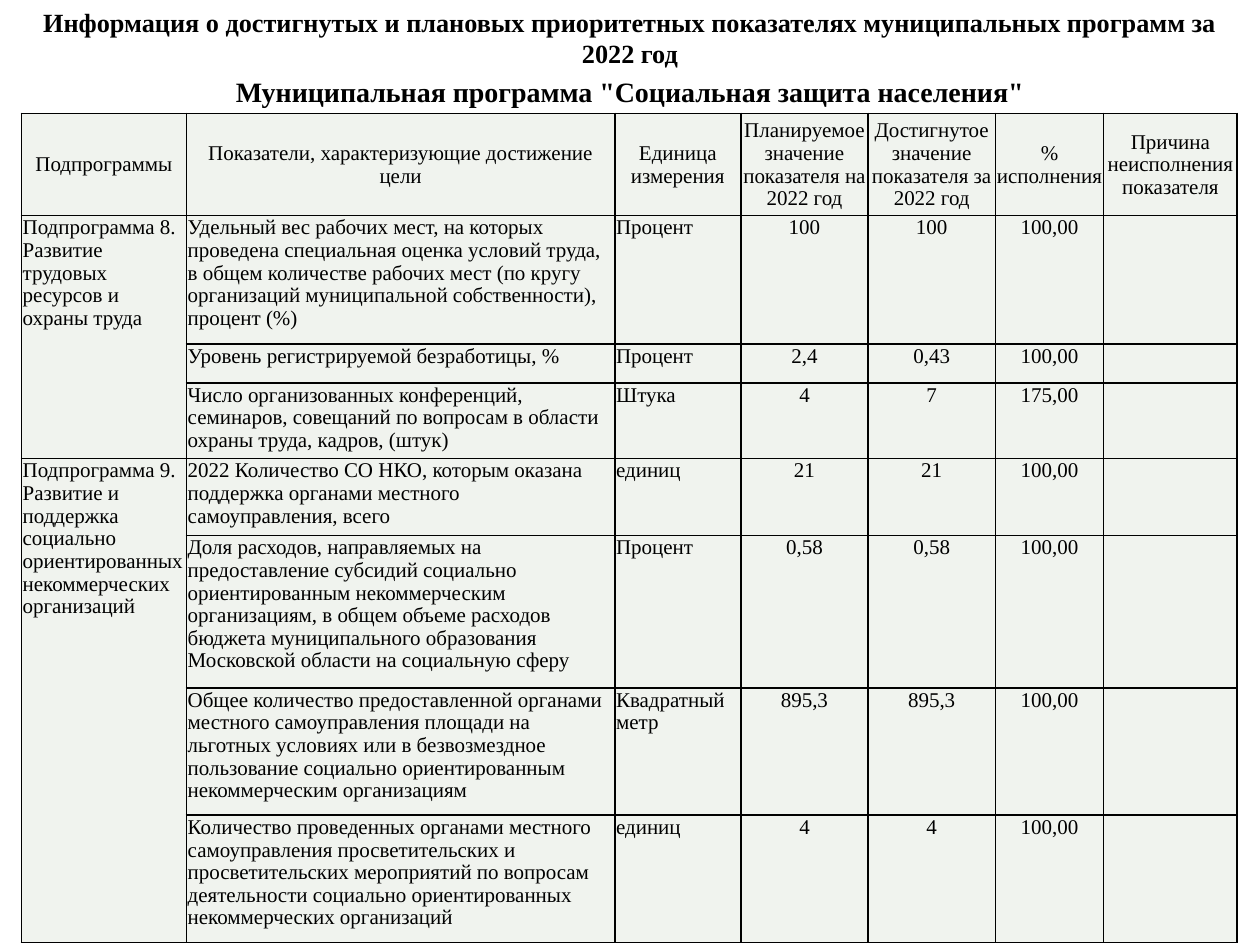
import pptx
import pptx.util
import pptx.oxml
import pptx.dml.color
import pptx.enum.text
from pptx.util import Inches, Pt

BLACK = pptx.dml.color.RGBColor(0x00, 0x00, 0x00)
CELL_FILL = pptx.dml.color.RGBColor(0xF0, 0xF3, 0xEE)
FONT = "Times New Roman"
LEFT = pptx.enum.text.PP_ALIGN.LEFT
CENTER = pptx.enum.text.PP_ALIGN.CENTER
TOP = pptx.enum.text.MSO_ANCHOR.TOP
MIDDLE = pptx.enum.text.MSO_ANCHOR.MIDDLE

COLUMN_WIDTHS = [1.31, 3.4, 1, 1.01, 1.01, 0.86, 1.06]
ROW_HEIGHTS = [0.81, 1.02, 0.24, 0.6, 0.61, 1.21, 1.01, 1.01]
HEADERS = [
    "Подпрограммы",
    "Показатели, характеризующие достижение цели",
    "Единица измерения",
    "Планируемое значение показателя на 2022 год",
    "Достигнутое значение показателя за 2022 год",
    "% исполнения",
    "Причина неисполнения показателя",
]
SUBPROGRAMS = [
    ("Подпрограмма 8. Развитие трудовых ресурсов и охраны труда", [
        ("Удельный вес рабочих мест, на которых проведена специальная оценка "
         "условий труда, в общем количестве рабочих мест (по кругу организаций "
         "муниципальной собственности), процент (%)",
         "Процент", "100", "100", "100,00", ""),
        ("Уровень регистрируемой безработицы, %",
         "Процент", "2,4", "0,43", "100,00", ""),
        ("Число организованных конференций, семинаров, совещаний по вопросам "
         "в области охраны труда, кадров, (штук)",
         "Штука", "4", "7", "175,00", ""),
    ]),
    ("Подпрограмма 9. Развитие и поддержка социально ориентированных "
     "некоммерческих организаций", [
        ("2022 Количество СО НКО, которым оказана поддержка органами местного "
         "самоуправления, всего",
         "единиц", "21", "21", "100,00", ""),
        ("Доля расходов, направляемых на предоставление субсидий социально "
         "ориентированным некоммерческим организациям, в общем объеме расходов "
         "бюджета муниципального образования Московской области на социальную сферу",
         "Процент", "0,58", "0,58", "100,00", ""),
        ("Общее количество предоставленной органами местного самоуправления "
         "площади на льготных условиях или в безвозмездное пользование социально "
         "ориентированным некоммерческим организациям",
         "Квадратный метр", "895,3", "895,3", "100,00", ""),
        ("Количество проведенных органами местного самоуправления просветительских "
         "и просветительских мероприятий по вопросам деятельности социально "
         "ориентированных некоммерческих организаций",
         "единиц", "4", "4", "100,00", ""),
    ]),
]


def write(p, text, size=12, bold=False, align=LEFT, spacing=None):
    p.alignment = align
    if spacing:
        p.line_spacing = spacing
    r = p.add_run()
    r.text = text
    r.font.name = FONT
    r.font.size = Pt(size)
    r.font.bold = bold
    r.font.color.rgb = BLACK


def add_title(s, lines, top, height, size):
    tf = s.shapes.add_textbox(0, Inches(top), Inches(10), Inches(height)).text_frame
    tf.word_wrap = True
    for i, line in enumerate(lines):
        p = tf.add_paragraph() if i else tf.paragraphs[0]
        write(p, line, size=size, bold=True, align=CENTER)


def add_borders(cell):
    tc_pr = cell._tc.get_or_add_tcPr()
    for i, side in enumerate(("lnL", "lnR", "lnT", "lnB")):
        tc_pr.insert(i, pptx.oxml.parse_xml(
            f'<a:{side} xmlns:a="http://schemas.openxmlformats.org/drawingml/2006/main" '
            f'w="{Pt(1)}"><a:solidFill><a:srgbClr val="{BLACK}"/></a:solidFill></a:{side}>'))


def fill_cell(cell, text, align=LEFT, anchor=TOP):
    cell.margin_left = cell.margin_right = cell.margin_top = Inches(0.01)
    cell.margin_bottom = 0
    cell.vertical_anchor = anchor
    cell.fill.solid()
    cell.fill.fore_color.rgb = CELL_FILL
    add_borders(cell)
    write(cell.text_frame.paragraphs[0], text, align=align, spacing=0.97)


def add_indicator_table(s):
    table = s.shapes.add_table(
        len(ROW_HEIGHTS), len(COLUMN_WIDTHS), Inches(0.17), Inches(0.9),
        Inches(sum(COLUMN_WIDTHS)), Inches(sum(ROW_HEIGHTS))).table
    for column, width in zip(table.columns, COLUMN_WIDTHS):
        column.width = Inches(width)
    for row, height in zip(table.rows, ROW_HEIGHTS):
        row.height = Inches(height)
    for c, header in enumerate(HEADERS):
        fill_cell(table.cell(0, c), header, align=CENTER, anchor=MIDDLE)
    row = 1
    for subprogram, indicators in SUBPROGRAMS:
        first = row
        for indicator in indicators:
            name = subprogram if row == first else ""
            for c, text in enumerate((name, *indicator)):
                fill_cell(table.cell(row, c), text, align=CENTER if c > 2 else LEFT)
            row += 1
        table.cell(first, 0).merge(table.cell(row - 1, 0))


def main():
    prs = pptx.Presentation()
    prs.slide_width = Inches(10)
    prs.slide_height = Inches(7.5)
    s = prs.slides.add_slide(prs.slide_layouts[6])
    add_title(s, ["Информация о достигнутых и плановых приоритетных показателях "
                  "муниципальных программ за", "2022 год"], 0, 0.61, 15)
    add_title(s, ['Муниципальная программа "Социальная защита населения"'],
              0.54, 0.37, 16)
    add_indicator_table(s)
    prs.save("out.pptx")


if __name__ == "__main__":
    main()
